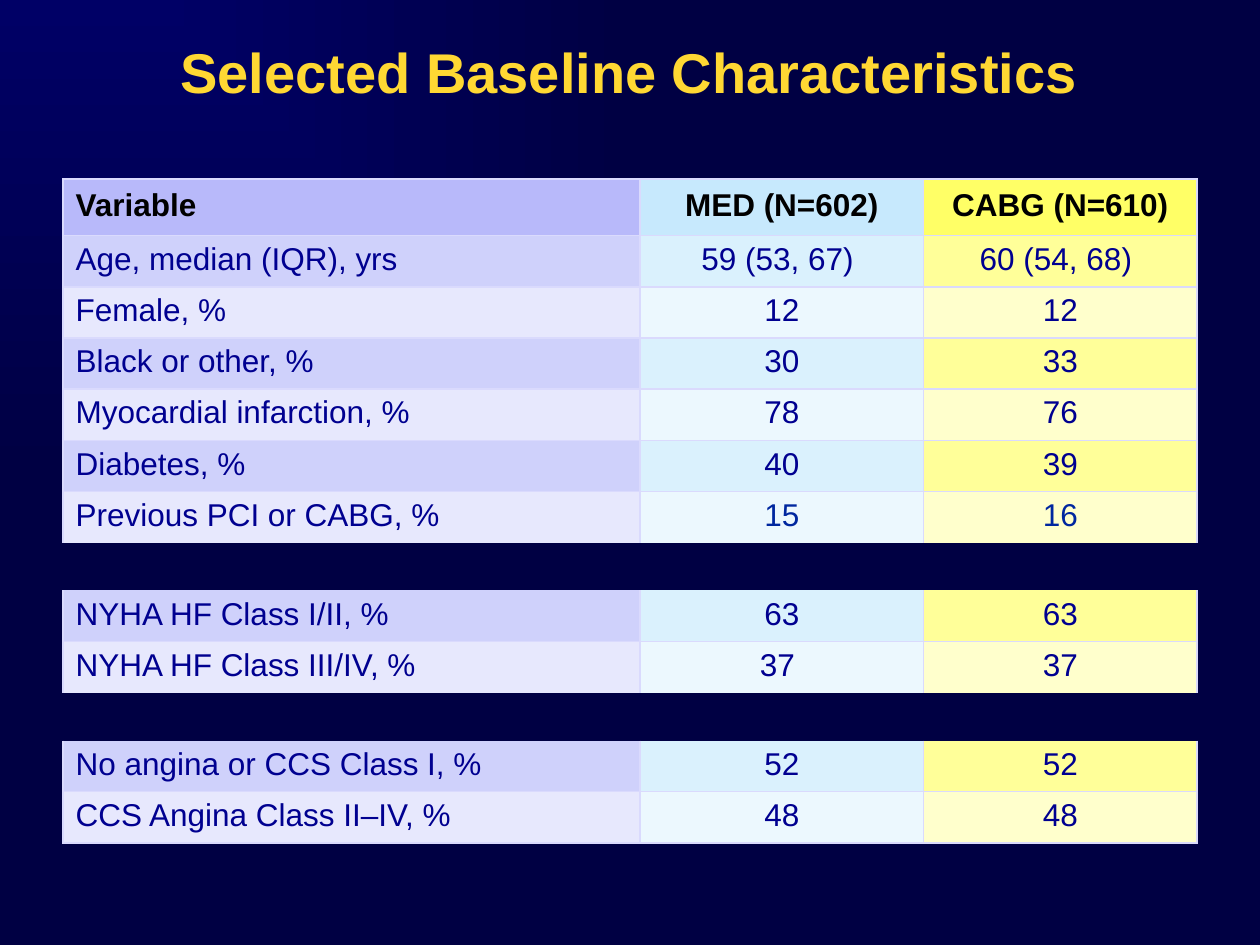
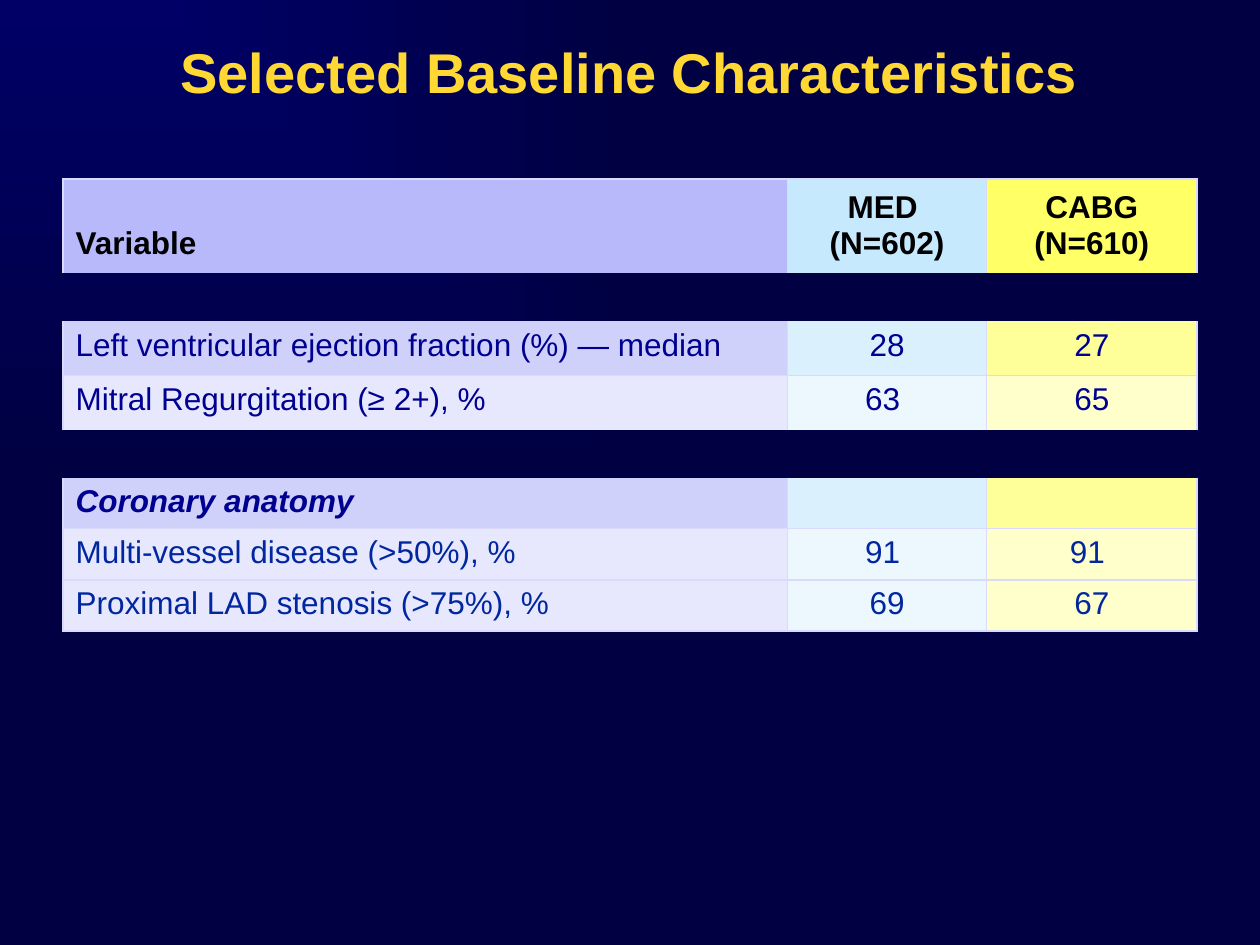
from lxml import etree
from pptx import Presentation
from pptx.dml.color import RGBColor
from pptx.enum.text import MSO_ANCHOR, PP_ALIGN
from pptx.oxml.ns import qn
from pptx.util import Inches, Pt

LEFT, CENTER = PP_ALIGN.LEFT, PP_ALIGN.CENTER
TOP, BOTTOM = MSO_ANCHOR.TOP, MSO_ANCHOR.BOTTOM

TITLE = "Selected Baseline Characteristics"
FONT = "Arial"
GOLD, BLACK, NAVY, BLUE = "FFD833", "000000", "000090", "00279F"
BACKGROUND = ("000066", "000043")
BORDER = "DADAFD"

# Fills run from the variable column to MED and CABG.
HEADER_FILLS = ("B8B9FA", "C7E9FD", "FFFF66")
DARK_FILLS = ("CFD1FB", "DAF1FD", "FFFF99")
LIGHT_FILLS = ("E7E8FD", "ECF8FE", "FFFFCC")

# Each row style: fills, label colour, number colour, bold, italic
STYLES = {
    "header": (HEADER_FILLS, BLACK, BLACK, True, False),
    "dark": (DARK_FILLS, NAVY, NAVY, False, False),
    "light": (LIGHT_FILLS, NAVY, NAVY, False, False),
    "blue numbers": (LIGHT_FILLS, NAVY, BLUE, False, False),
    "subheading": (DARK_FILLS, NAVY, NAVY, True, True),
    "blue": (LIGHT_FILLS, BLUE, BLUE, False, False),
}
ROW, TALL_ROW, TWO_LINE_ROW, GAP_ROW = 13 / 32, 0.43, 0.71, 0.38
GAP = None

TABLES = [
    {
        "columns": (4.58, 2.25, 2.17),
        "rows": [
            ("header", TALL_ROW, "Variable", "MED (N=602)", "CABG (N=610)"),
            ("dark", ROW, "Age, median (IQR), yrs", "59 (53, 67) ", "60 (54, 68) "),
            ("light", ROW, "Female, %", "12", "12"),
            ("dark", ROW, "Black or other, %", "30", "33"),
            ("light", ROW, "Myocardial infarction, %", "78", "76"),
            ("dark", ROW, "Diabetes, %", "40", "39"),
            ("blue numbers", ROW, "Previous PCI or CABG, %", "15", "16"),
            GAP,
            ("dark", ROW, "NYHA HF Class I/II, %", "63", "63"),
            ("light", ROW, "NYHA HF Class III/IV, %", "37 ", "37"),
            GAP,
            ("dark", ROW, "No angina or CCS Class I, %", "52", "52"),
            ("light", ROW, "CCS Angina Class II–IV, %", "48", "48"),
        ],
    },
    {
        "columns": (5.75, 1.58, 1.67),
        "rows": [
            ("header", TWO_LINE_ROW, "Variable", "MED \n(N=602)", "CABG\n(N=610)"),
            GAP,
            ("dark", TALL_ROW, "Left ventricular ejection fraction (%) — median", "28", "27"),
            ("light", TALL_ROW, "Mitral Regurgitation (≥ 2+), %", "63 ", "65"),
            GAP,
            ("subheading", ROW, "Coronary anatomy", "", ""),
            ("blue", ROW, "Multi-vessel disease (>50%), %", "91 ", "91 "),
            ("blue", ROW, "Proximal LAD stenosis (>75%), %", "69", "67"),
        ],
    },
]


def rgb(color):
    return RGBColor.from_string(color)


def set_background(master):
    """Fill the master with a gradient that spreads from the top left corner."""
    fill = master.background.fill
    fill.gradient()
    for stop, color in zip(fill.gradient_stops, BACKGROUND):
        stop.color.rgb = rgb(color)
    gradient = next(master.element.iter(qn("a:gradFill")))
    gradient.remove(gradient.find(qn("a:lin")))
    spread = etree.SubElement(gradient, qn("a:path"), {"path": "rect"})
    etree.SubElement(spread, qn("a:fillToRect"), {"r": "100000", "b": "100000"})


def write(paragraph, text, alignment, size, color, bold, italic=False):
    paragraph.text = text
    paragraph.alignment = alignment
    formats = {"name": FONT, "size": Pt(size), "bold": bold, "italic": italic}
    for run in paragraph.runs:
        for name, value in formats.items():
            setattr(run.font, name, value)
        run.font.color.rgb = rgb(color)


def add_title(slide):
    box = slide.shapes.add_textbox(Inches(0.33), Inches(0.25), Inches(9.33), Inches(0.4))
    frame = box.text_frame
    frame.word_wrap = True
    frame.margin_left = frame.margin_right = frame.margin_bottom = 0
    frame.margin_top = Inches(0.05)
    write(frame.paragraphs[0], TITLE, CENTER, 32, GOLD, True)


def set_borders(cell, visible):
    """Draw the visible sides (of L, R, T, B) and clear the others."""
    properties = cell._tc.get_or_add_tcPr()
    for side in "LRTB":
        line = etree.SubElement(properties, qn(f"a:ln{side}"), {"w": str(Pt(1))})
        if side in visible:
            solid = etree.SubElement(line, qn("a:solidFill"))
            etree.SubElement(solid, qn("a:srgbClr"), {"val": BORDER})
        else:
            etree.SubElement(line, qn("a:noFill"))


def fill_gap(cells):
    for cell in cells:
        cell.margin_top = cell.margin_bottom = 0
        set_borders(cell, "")
        cell.fill.background()
    cells[0].merge(cells[-1])


def fill_row(cells, row, sides):
    style, _, *texts = row
    fills, label_color, number_color, bold, italic = STYLES[style]
    is_header = style == "header"
    for column, (cell, text, fill) in enumerate(zip(cells, texts, fills)):
        set_borders(cell, sides)
        cell.fill.solid()
        cell.fill.fore_color.rgb = rgb(fill)
        cell.margin_bottom = Inches(0.1 if is_header else 0.05)
        cell.vertical_anchor = BOTTOM if is_header else TOP
        alignment, color = (CENTER, number_color) if column else (LEFT, label_color)
        write(cell.text_frame.paragraphs[0], text, alignment, 18, color, bold, italic)


def add_characteristics(slide, columns, rows):
    heights = [GAP_ROW if row is GAP else row[1] for row in rows]
    table = slide.shapes.add_table(
        len(rows), len(columns), Inches(0.5), Inches(1.42),
        Inches(sum(columns)), Inches(sum(heights)),
    ).table
    table.first_row = table.horz_banding = False
    for column, width in zip(table.columns, columns):
        column.width = Inches(width)
    for index, (row, height) in enumerate(zip(rows, heights)):
        table.rows[index].height = Inches(height)
        cells = list(table.rows[index].cells)
        if row is GAP:
            fill_gap(cells)
            continue
        after_gap = index > 0 and rows[index - 1] is GAP
        before_gap = index + 1 < len(rows) and rows[index + 1] is GAP
        sides = "LR" + ("" if after_gap else "T") + ("" if before_gap else "B")
        fill_row(cells, row, sides)


def main():
    presentation = Presentation()
    presentation.slide_width, presentation.slide_height = Inches(10), Inches(7.5)
    set_background(presentation.slide_master)
    blank_layout = presentation.slide_layouts[6]
    for content in TABLES:
        slide = presentation.slides.add_slide(blank_layout)
        add_title(slide)
        add_characteristics(slide, **content)
    presentation.save("out.pptx")


if __name__ == "__main__":
    main()
